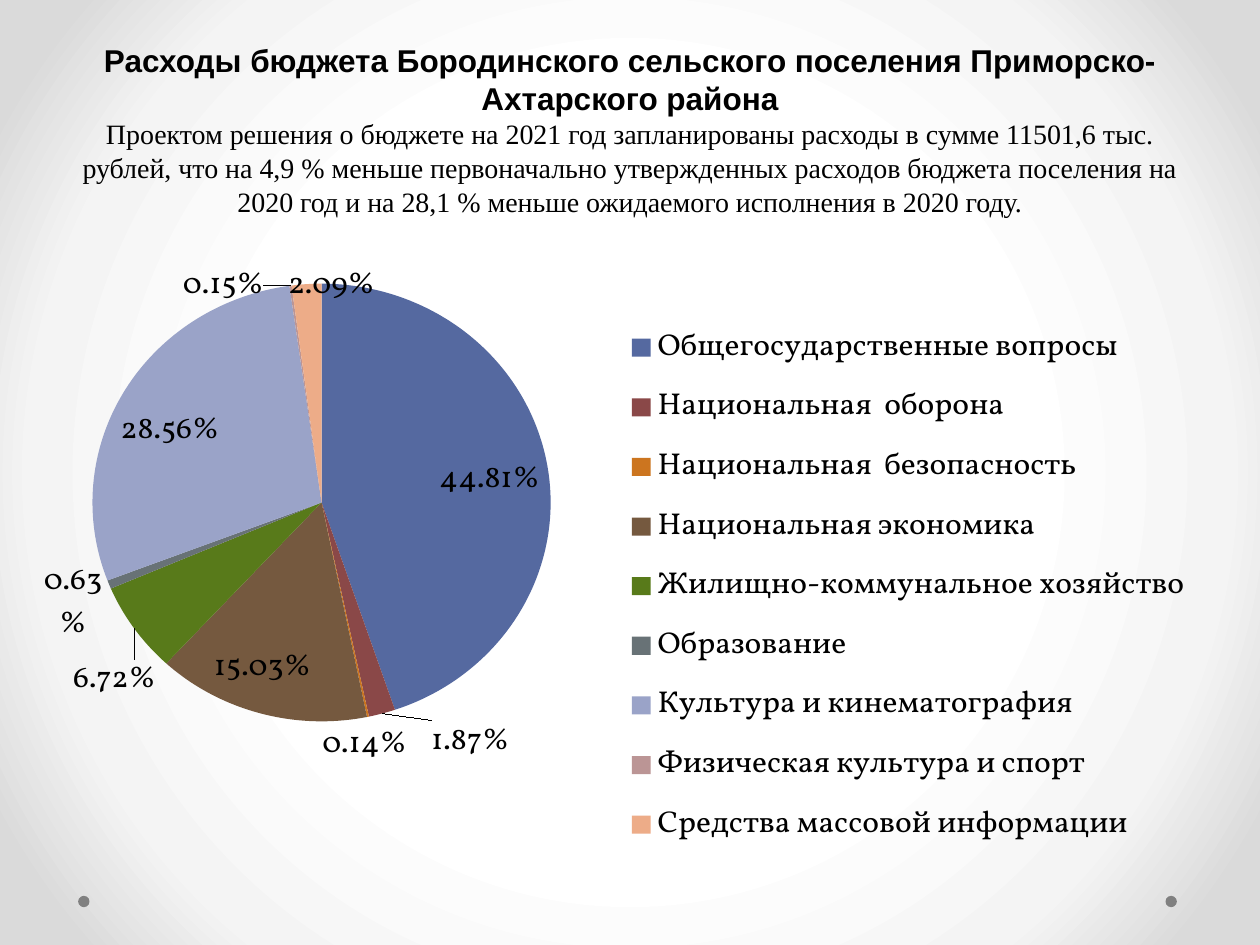
from dataclasses import dataclass

from lxml import etree
from pptx import Presentation
from pptx import util as u
from pptx.chart.data import CategoryChartData
from pptx.dml.color import RGBColor
from pptx.enum import chart as ch, shapes, text
from pptx.oxml import parse_xml
from pptx.oxml.ns import nsdecls, qn


@dataclass(frozen=True)
class Theme:
    ink: str = "000000"
    dot: str = "808080"
    backdrop: tuple = ((50, "FFFFFF"), (76, "F4F4F4"), (92, "DADADA"))
    slices: tuple = ("5569A0", "8A4848", "CC751F", "75593F", "587A1A",
                     "687276", "9AA3C8", "BB9595", "EDAC88")
    heading_font: str = "Arial"
    summary_font: str = "Times New Roman"
    chart_font: str = "Vollkorn"
    heading_size: int = 18
    summary_size: int = 16
    chart_size: int = 18


HEADING = "Расходы бюджета Бородинского сельского поселения Приморско-Ахтарского района"
SUMMARY = ("Проектом решения о бюджете на 2021 год запланированы расходы в сумме "
           "11501,6 тыс. рублей, что на 4,9 % меньше первоначально утвержденных "
           "расходов бюджета поселения на 2020 год и на 28,1 % меньше ожидаемого "
           "исполнения в 2020 году.")
EXPENSES = {
    "Общегосударственные вопросы": 44.81,
    "Национальная  оборона": 1.87,
    "Национальная  безопасность": 0.14,
    "Национальная экономика": 15.03,
    "Жилищно-коммунальное хозяйство": 6.72,
    "Образование": 0.63,
    "Культура и кинематография": 28.56,
    "Физическая культура и спорт": 0.15,
    "Средства массовой информации": 2.09,
}


class Deck:
    """Places elements on the current slide; boxes are shares of its size."""

    def __init__(self, theme):
        self.theme = theme
        self.prs = Presentation()
        self.prs.slide_width, self.prs.slide_height = u.Inches(10), u.Inches(7.5)
        self.slide = self.prs.slides.add_slide(self.prs.slide_layouts[5])

    def box(self, left, top, width, height):
        w, h = self.prs.slide_width, self.prs.slide_height
        return int(left * w), int(top * h), int(width * w), int(height * h)

    def style(self, font, name, size, bold=False):
        font.name, font.size, font.bold = name, u.Pt(size), bold
        font.color.rgb = RGBColor.from_string(self.theme.ink)

    def backdrop(self):
        """Radial gradient spreading from the middle of the slide."""
        stops = "".join(f'<a:gs pos="{share * 1000}"><a:srgbClr val="{colour}"/></a:gs>'
                        for share, colour in self.theme.backdrop)
        background = parse_xml(
            f'<p:bg {nsdecls("p", "a")}><p:bgPr><a:gradFill rotWithShape="1">'
            f'<a:gsLst>{stops}</a:gsLst><a:path path="circle">'
            '<a:fillToRect l="50000" t="50000" r="50000" b="50000"/></a:path>'
            '</a:gradFill><a:effectLst/></p:bgPr></p:bg>')
        self.slide.element.cSld.insert(0, background)

    def dot(self, left, top, diameter):
        """Diameter is a share of the slide's width."""
        x, y, size, _ = self.box(left, top, diameter, 0)
        dot = self.slide.shapes.add_shape(shapes.MSO_SHAPE.OVAL, x, y, size, size)
        dot.shadow.inherit = False
        dot.fill.solid()
        dot.fill.fore_color.rgb = RGBColor.from_string(self.theme.dot)
        dot.line.fill.background()

    def title(self, heading, summary, box):
        title = self.slide.shapes.title
        title.left, title.top, title.width, title.height = self.box(*box)
        frame = title.text_frame
        frame.text = f"{heading}\n{summary}"
        frame.word_wrap = True
        frame.auto_size = text.MSO_AUTO_SIZE.NONE
        frame.vertical_anchor = text.MSO_ANCHOR.BOTTOM
        t = self.theme
        looks = ((t.heading_font, t.heading_size, True),
                 (t.summary_font, t.summary_size, False))
        for paragraph, look in zip(frame.paragraphs, looks):
            paragraph.alignment = text.PP_ALIGN.CENTER
            paragraph.space_before = u.Pt(0)
            self.style(paragraph.runs[0].font, *look)

    @staticmethod
    def set_layout(part, left, top, width, height, inner=False):
        """Fix a chart part's place, in shares of the chart's size."""
        layout = part.find(qn("c:layout"))
        if layout is None:
            layout = etree.Element(qn("c:layout"))
            legend_position = part.find(qn("c:legendPos"))
            if legend_position is None:
                part.insert(0, layout)
            else:
                legend_position.addnext(layout)
        for old in list(layout):
            layout.remove(old)
        manual = etree.SubElement(layout, qn("c:manualLayout"))
        settings = {"layoutTarget": "inner"} if inner else {}
        settings |= {"xMode": "edge", "yMode": "edge",
                     "x": left, "y": top, "w": width, "h": height}
        for tag, value in settings.items():
            etree.SubElement(manual, qn(f"c:{tag}")).set("val", str(value))

    def pie(self, values, box, plot_area, legend_area):
        data = CategoryChartData()
        data.categories = list(values)
        data.add_series("Series 1", list(values.values()))
        chart = self.slide.shapes.add_chart(
            ch.XL_CHART_TYPE.PIE, *self.box(*box), data).chart
        self.style(chart.font, self.theme.chart_font, self.theme.chart_size)
        chart.has_title = False
        chart.has_legend = True
        chart.legend.position = ch.XL_LEGEND_POSITION.RIGHT
        chart.legend.include_in_layout = False
        plot = chart.plots[0]
        plot.vary_by_categories = True
        for index, colour in enumerate(self.theme.slices):
            fill = plot.series[0].points[index].format.fill
            fill.solid()
            fill.fore_color.rgb = RGBColor.from_string(colour)
        labels = plot.series[0].data_labels
        labels.show_percentage, labels.show_value = True, False
        labels.number_format, labels.number_format_is_linked = "0.00%", False
        labels.position = ch.XL_LABEL_POSITION.BEST_FIT
        self.style(labels.font, self.theme.chart_font, self.theme.chart_size)
        self.set_layout(chart.element.find(".//" + qn("c:plotArea")), *plot_area, inner=True)
        self.set_layout(chart.element.find(".//" + qn("c:legend")), *legend_area)


def main():
    deck = Deck(Theme())
    deck.backdrop()
    for left in (0.062, 0.925):
        deck.dot(left, 0.948, 0.009)
    deck.title(HEADING, SUMMARY, (0.05, 0, 0.9, 0.237))
    deck.pie(EXPENSES, (0.02, 0.248, 0.96, 0.713),
             plot_area=(0.02, 0.03, 0.45, 0.68),
             legend_area=(0.48, 0.07, 0.5, 0.86))
    deck.prs.save("out.pptx")


if __name__ == "__main__":
    main()
